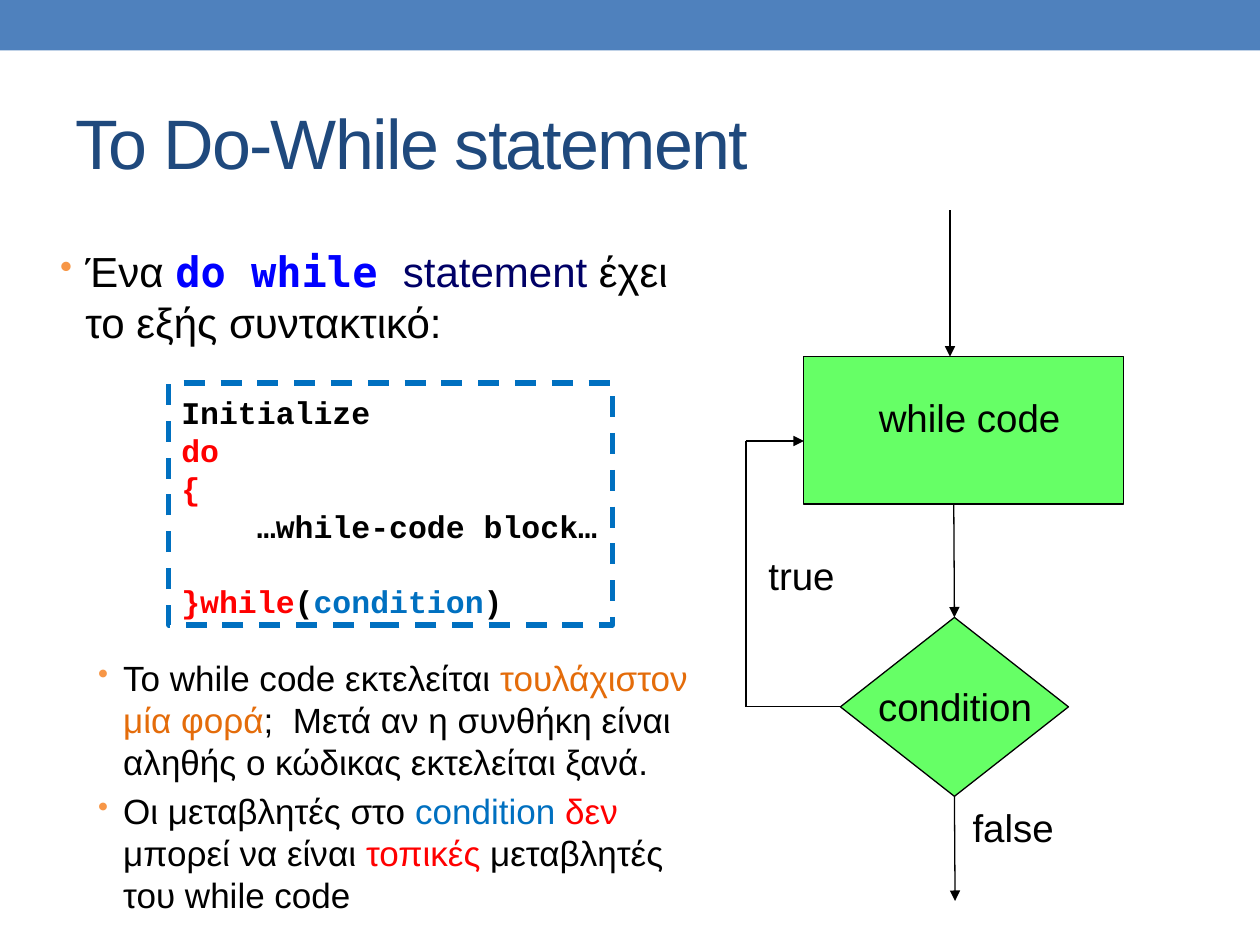
"""Build the do-while statement slide with its syntax box and flowchart."""
import pptx
import pptx.dml.color
import pptx.enum.dml
import pptx.enum.shapes
import pptx.enum.text
import pptx.oxml.ns
import pptx.util
from lxml import etree

Inches, Pt = pptx.util.Inches, pptx.util.Pt
RGBColor = pptx.dml.color.RGBColor
SHAPE = pptx.enum.shapes.MSO_SHAPE
qn = pptx.oxml.ns.qn

BLACK = RGBColor(0x00, 0x00, 0x00)
BAND = RGBColor(0x4F, 0x81, 0xBD)
TITLE = RGBColor(0x1F, 0x49, 0x7D)
BULLET = RGBColor(0xF7, 0x96, 0x46)
KEYWORD = RGBColor(0x00, 0x00, 0xFF)
NAVY = RGBColor(0x00, 0x00, 0x66)
ORANGE = RGBColor(0xE4, 0x6C, 0x0A)
BLUE = RGBColor(0x00, 0x70, 0xC0)
RED = RGBColor(0xFF, 0x00, 0x00)
GREEN = RGBColor(0x66, 0xFF, 0x66)


def add_runs(p, runs, size, font="Arial", bold=False):
    for text, color in runs:
        r = p.add_run()
        r.text = text
        r.font.name = font
        r.font.size = Pt(size)
        r.font.bold = bold
        r.font.color.rgb = color


def add_box(kind, left, top, width, height, fill=None, line=None, weight=0.75):
    s = shapes.add_shape(kind, Inches(left), Inches(top), Inches(width), Inches(height))
    s.shadow.inherit = False
    if fill is None:
        s.fill.background()
    else:
        s.fill.solid()
        s.fill.fore_color.rgb = fill
    if line is None:
        s.line.fill.background()
    else:
        s.line.color.rgb = line
        s.line.width = Pt(weight)
    return s


prs = pptx.Presentation()
prs.slide_width, prs.slide_height = Inches(10), Inches(7.5)
shapes = prs.slides.add_slide(prs.slide_layouts[6]).shapes

add_box(SHAPE.RECTANGLE, 0, 0, 10, 0.4, BAND)

tf = shapes.add_textbox(Inches(0.5), Inches(0.58), Inches(9), Inches(1.08)).text_frame
tf.word_wrap = True
tf.vertical_anchor = pptx.enum.text.MSO_ANCHOR.MIDDLE
add_runs(tf.paragraphs[0], [("Το Do-While statement", TITLE)], 40)
tf.paragraphs[0].runs[0].font._element.set("spc", "-100")

# (top, height, indent, size, paragraphs)
bullet_boxes = [
    (1.9, 0.95, 0.2, 24, [
        [("Ένα ", BLACK), ("do while ", KEYWORD), ("statement ", NAVY),
         ("έχει το εξής συντακτικό:", BLACK)],
    ]),
    (5.16, 2.2, 0.5, 20, [
        [("To while code εκτελείται ", BLACK), ("τουλάχιστον μία φορά", ORANGE),
         (";  Μετά αν η συνθήκη είναι αληθής ο κώδικας εκτελείται ξανά.", BLACK)],
        [("Oι μεταβλητές στο ", BLACK), ("condition ", BLUE), ("δεν ", RED),
         ("μπορεί να είναι ", BLACK), ("τοπικές", RED),
         (" μεταβλητές του while code", BLACK)],
    ]),
]
for top, height, indent, size, paragraphs in bullet_boxes:
    tf = shapes.add_textbox(Inches(0.38), Inches(top), Inches(5.23), Inches(height)).text_frame
    tf.word_wrap = True
    for i, runs in enumerate(paragraphs):
        p = tf.add_paragraph() if i else tf.paragraphs[0]
        add_runs(p, runs, size)
        p.line_spacing = Pt(1.2 * size)
        p.space_before = Pt(0.2 * size if i else 0)
        pPr = p._p.get_or_add_pPr()
        pPr.set("marL", str(Inches(indent)))
        pPr.set("indent", str(Inches(-0.2)))
        color = etree.SubElement(pPr, qn("a:buClr"))
        etree.SubElement(color, qn("a:srgbClr"), val=str(BULLET))
        etree.SubElement(pPr, qn("a:buSzPct"), val="85000")
        etree.SubElement(pPr, qn("a:buChar"), char="•")
        for r in p.runs:
            if r.font.color.rgb == KEYWORD:
                r.font.name = "DejaVu Sans Mono"
                r.font.bold = True

code_box = add_box(SHAPE.RECTANGLE, 1.34, 3.04, 3.52, 1.92, line=BLUE, weight=3)
code_box.line.dash_style = pptx.enum.dml.MSO_LINE.DASH
tf = code_box.text_frame
tf.word_wrap = False
tf.vertical_anchor = pptx.enum.text.MSO_ANCHOR.TOP
tf.margin_top = Inches(0.08)
# (runs, indent, space before)
code_lines = [
    ([("Initialize", BLACK)], 0, 0),
    ([("do", RED)], 0, 0),
    ([("{", RED)], 0, 0),
    ([("…while-code block…", BLACK)], 0.6, 0),
    ([("}while", RED), ("(", BLACK), ("condition", BLUE), (")", BLACK)], 0, 21.6),
]
for i, (runs, indent, before) in enumerate(code_lines):
    p = tf.add_paragraph() if i else tf.paragraphs[0]
    add_runs(p, runs, 18, "Courier New", True)
    p.alignment = pptx.enum.text.PP_ALIGN.LEFT
    p.line_spacing = Pt(21.6)
    p.space_before = Pt(before)
    p._p.get_or_add_pPr().set("marL", str(Inches(indent)))

add_box(SHAPE.RECTANGLE, 6.38, 2.83, 2.54, 1.17, GREEN, BLACK)
diamond = add_box(SHAPE.DIAMOND, 6.67, 4.9, 1.81, 1.42, GREEN, BLACK)

# (start, end, arrow, diamond site at start, diamond site at end)
flow_lines = [
    ((7.54, 1.67), (7.54, 2.83), True, None, None),
    ((7.57, 4), (7.57, 4.9), True, None, 0),
    ((7.58, 6.32), (7.58, 7.15), True, 2, None),
    ((6.67, 5.61), (5.92, 5.61), False, 1, None),
    ((5.92, 5.61), (5.92, 3.5), False, None, None),
    ((5.92, 3.5), (6.38, 3.5), True, None, None),
]
for start, end, arrow, begin_site, end_site in flow_lines:
    s = shapes.add_connector(pptx.enum.shapes.MSO_CONNECTOR.STRAIGHT,
                             *map(Inches, start + end))
    if begin_site is not None:
        s.begin_connect(diamond, begin_site)
    if end_site is not None:
        s.end_connect(diamond, end_site)
    s.line.color.rgb = BLACK
    s.line.width = Pt(0.75)
    if arrow:
        etree.SubElement(s.line._get_or_add_ln(), qn("a:tailEnd"), type="triangle")
    etree.SubElement(s._element.spPr, qn("a:effectLst"))

labels = [
    ("while code", 6.54, 3.08, 2.31, True),
    ("condition", 6.85, 5.37, 1.46, True),
    ("false", 7.62, 6.33, 1.08, False),
    ("true", 6, 4.33, 1.15, False),
]
for text, left, top, width, centred in labels:
    tf = shapes.add_textbox(Inches(left), Inches(top), Inches(width), Inches(0.47)).text_frame
    tf.word_wrap = True
    p = tf.paragraphs[0]
    add_runs(p, [(text, BLACK)], 22)
    if centred:
        p.alignment = pptx.enum.text.PP_ALIGN.CENTER

prs.save("out.pptx")
